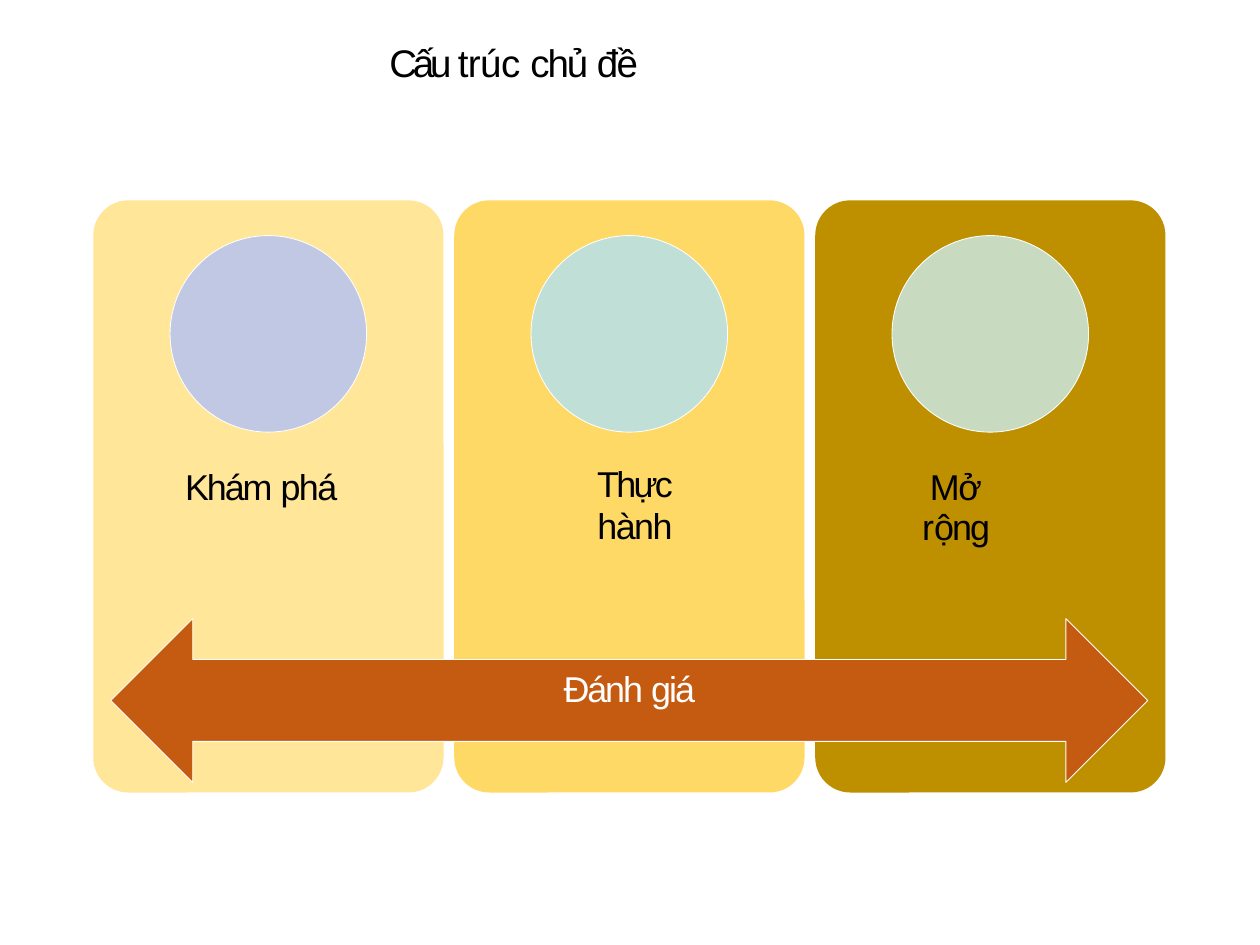
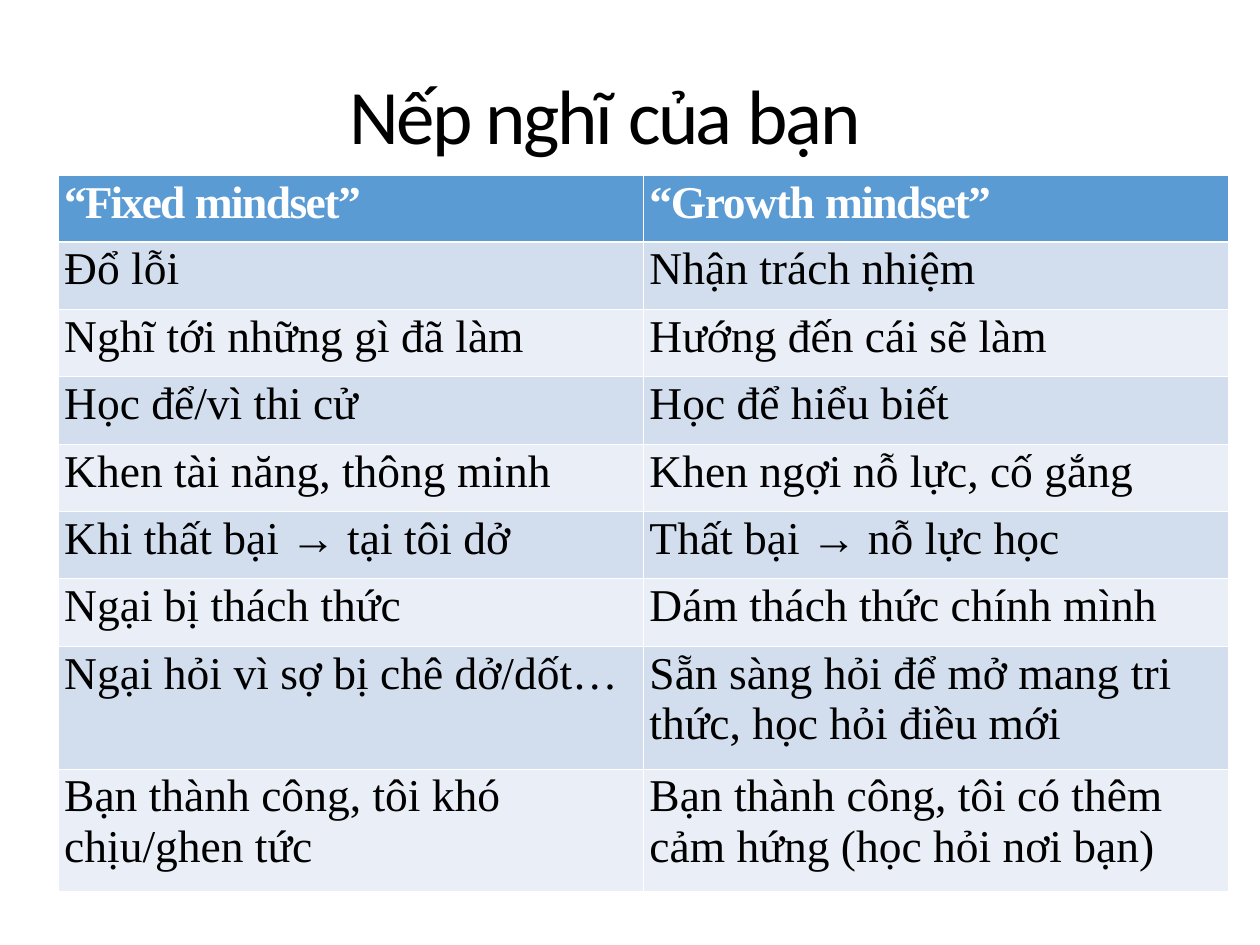
from lxml.etree import SubElement
from pptx import Presentation
from pptx.dml.color import RGBColor
from pptx.enum.shapes import MSO_SHAPE
from pptx.enum.text import MSO_ANCHOR, MSO_AUTO_SIZE, PP_ALIGN
from pptx.oxml import parse_xml
from pptx.oxml.ns import nsdecls, qn
from pptx.util import Inches, Pt

COLORS = {
    "black": "000000", "white": "FFFFFF",
    "explore": "FFE699", "practice": "FFD966", "extend": "BE9000",
    "lavender": "C0C8E3", "mint": "C0DFD6", "sage": "C8DBC1",
    "arrow": "C55A11",
    "header": "5B9BD4", "band_dark": "D2DEEE", "band_light": "EAEEF7",
}
COLUMNS, ROWS = 100, 75
TITLE_ONLY = 5

# Text is a list of paragraphs; a paragraph is a list of (words, letter spacing)
STEPS = [
    {"panel": "explore", "circle": "lavender", "box": (14.5, 36.7, 13.6, 13.5),
     "text": [[("Khám ", -1.2), ("phá", -0.9)]],
     "frame": {"margin_top": Inches(0.05)},
     "paragraph": {"line_spacing": Pt(22.6), "space_before": Pt(3.4)}, "indent": 0.02},
    {"panel": "practice", "circle": "mint", "box": (40.1, 36.7, 20.6, 9),
     "text": [[("Thực", -1.6)], [("hành", -0.9)]],
     "frame": {"margin_top": Inches(0.01)},
     "paragraph": {"line_spacing": Pt(23.6), "alignment": PP_ALIGN.CENTER}},
    {"panel": "extend", "circle": "sage", "box": (73.1, 36.7, 11, 13.5),
     "text": [[("Mở", -0.7), ("\v", 0), ("r", -0.1), ("ộng", -1.1)]],
     "frame": {"margin_top": Inches(0.05)},
     "paragraph": {"line_spacing": Pt(22.6), "space_before": Pt(3.4)}, "indent": 0.07},
]

MINDSETS = [
    ("Đổ lỗi", "Nhận trách nhiệm"),
    ("Nghĩ tới những gì đã làm", "Hướng đến cái sẽ làm"),
    ("Học để/vì thi cử", "Học để hiểu biết"),
    ("Khen tài năng, thông minh", "Khen ngợi nỗ lực, cố gắng"),
    ("Khi thất bại → tại tôi dở", "Thất bại → nỗ lực học"),
    ("Ngại bị thách thức", "Dám thách thức chính mình"),
    ("Ngại hỏi vì sợ bị chê dở/dốt…",
     "Sẵn sàng hỏi để mở mang tri\nthức, học hỏi điều mới"),
    ("Bạn thành công, tôi khó\nchịu/ghen tức",
     "Bạn thành công, tôi có thêm\ncảm hứng (học hỏi nơi bạn)"),
]


def color(name):
    return RGBColor.from_string(COLORS[name])


def apply(target, values):
    for name, value in values.items():
        setattr(target, name, value)


class Deck:
    """Holds the shared style and the slide being built."""

    frame_format = {
        "margin_left": 0, "margin_right": 0, "margin_top": Inches(0.01),
        "margin_bottom": 0, "word_wrap": True, "auto_size": MSO_AUTO_SIZE.NONE,
        "vertical_anchor": MSO_ANCHOR.TOP,
    }

    def __init__(self):
        self.presentation = Presentation()
        apply(self.presentation, {"slide_width": Inches(10), "slide_height": Inches(7.5)})
        self.column = self.presentation.slide_width / COLUMNS
        self.row = self.presentation.slide_height / ROWS
        self.slide = None

    def box(self, left, top, width, height):
        return (round(left * self.column), round(top * self.row),
                round(width * self.column), round(height * self.row))

    def fill_paragraphs(self, frame, text, font, ink, paragraph_format=None, indent=0):
        for index, runs in enumerate(text):
            paragraph = frame.add_paragraph() if index else frame.paragraphs[0]
            apply(paragraph, paragraph_format or {})
            if indent:
                paragraph_properties = paragraph._p.get_or_add_pPr()
                paragraph_properties.set("marL", str(Inches(0.01)))
                paragraph_properties.set("indent", str(Inches(indent - 0.01)))
            for words, spacing in runs:
                if words == "\v":
                    paragraph.add_line_break()
                    continue
                run = paragraph.add_run()
                run.text = words
                apply(run.font, font)
                run.font.color.rgb = color(ink)
                if spacing:
                    run._r.get_or_add_rPr().set("spc", str(round(spacing * 100)))

    def add_text(self, frame, text, font, ink="black", frame_format=None,
                 paragraph_format=None, indent=0):
        apply(frame, {**self.frame_format, **(frame_format or {})})
        self.fill_paragraphs(frame, text, font, ink, paragraph_format, indent)

    def title_slide(self, box, text, font, alignment, anchor):
        layout = self.presentation.slide_layouts[TITLE_ONLY]
        self.slide = self.presentation.slides.add_slide(layout)
        title = self.slide.shapes.title
        apply(title, dict(zip(("left", "top", "width", "height"), self.box(*box))))
        self.add_text(title.text_frame, text, font,
                      frame_format={"vertical_anchor": anchor},
                      paragraph_format={"alignment": alignment, "space_before": Pt(0.9)})

    def shape(self, kind, box, fill, outlined=True, adjustments=()):
        shape = self.slide.shapes.add_shape(kind, *self.box(*box))
        shape.shadow.inherit = False
        shape.fill.solid()
        shape.fill.fore_color.rgb = color(fill)
        if outlined:
            shape.line.color.rgb = color("white")
            shape.line.width = Pt(0.48)
        else:
            shape.line.fill.background()
        for index, value in enumerate(adjustments):
            shape.adjustments[index] = value
        return shape

    def label(self, box, text, font, **formats):
        label = self.slide.shapes.add_textbox(*self.box(*box))
        self.add_text(label.text_frame, text, font, **formats)

    def border(self, cell, side, width):
        line = parse_xml(f'<a:{side} {nsdecls("a")} w="{Pt(width)}"/>')
        fill = SubElement(line, qn("a:solidFill"))
        SubElement(fill, qn("a:srgbClr")).set("val", COLORS["white"])
        cell._tc.get_or_add_tcPr().append(line)

    def cell(self, cell, text, fill, font, ink, top_line, bottom_line):
        for side, width in {"lnL": 0.5, "lnR": 0.5, "lnT": top_line,
                            "lnB": bottom_line}.items():
            self.border(cell, side, width)
        cell.fill.solid()
        cell.fill.fore_color.rgb = color(fill)
        apply(cell, {"margin_left": Inches(0.05), "margin_right": 0,
                     "margin_top": Inches(0.02), "margin_bottom": 0})
        self.fill_paragraphs(cell.text_frame, text, font, ink)
        cell.text_frame.paragraphs[0].space_before = Pt(0.9)

    def table(self, box, header, rows, heights, font):
        frame = self.slide.shapes.add_table(len(rows) + 1, len(header), *self.box(*box))
        table = frame.table
        apply(table, {"first_row": False, "horz_banding": False})
        for row, height in zip(table.rows, heights):
            row.height = round(height * self.row)
        for index, text in enumerate(header):
            self.cell(table.cell(0, index), [text], "header", {**font, "bold": True},
                      "white", 0.5, 1.5)
        for number, values in enumerate(rows, 1):
            band = "band_dark" if number % 2 else "band_light"
            for index, value in enumerate(values):
                text = [[(line, 0)] for line in value.split("\n")]
                self.cell(table.cell(number, index), text, band, font, "black",
                          1.5 if number == 1 else 0.5, 0.5)


def build_structure(deck):
    deck.title_slide((30.9, 3, 38.1, 7.8),
                     [[("Cấu ", -2.4), ("trúc ", -0.3), ("chủ ", -1.2), ("đề", -0.9)]],
                     {"name": "Arial", "size": Pt(22)}, PP_ALIGN.LEFT, MSO_ANCHOR.TOP)
    font = {"name": "Arial", "size": Pt(20.5)}

    # Three equal panels, each with a centred circle and a label
    panel_left, panel_width, panel_step, circle_size = 7.4, 27.8, 28.65, 15.6
    for index, step in enumerate(STEPS):
        left = panel_left + index * panel_step
        deck.shape(MSO_SHAPE.ROUNDED_RECTANGLE, (left, 15.9, panel_width, 47),
                   step["panel"], outlined=False, adjustments=[0.1])
        circle_left = left + (panel_width - circle_size) / 2
        deck.shape(MSO_SHAPE.OVAL, (circle_left, 18.7, circle_size, circle_size),
                   step["circle"])
        deck.label(step["box"], step["text"], font, frame_format=step["frame"],
                   paragraph_format=step["paragraph"], indent=step.get("indent", 0))

    # Assessment arrow across all panels
    arrow = deck.shape(MSO_SHAPE.LEFT_RIGHT_ARROW, (8.8, 49.1, 82.3, 13), "arrow",
                       adjustments=[0.5, 0.5])
    deck.add_text(arrow.text_frame, [[("Đánh ", -1.2), ("giá", -1.1)]], font, "white",
                  {"vertical_anchor": MSO_ANCHOR.MIDDLE, "margin_bottom": Inches(0.2)},
                  {"alignment": PP_ALIGN.CENTER})


def build_mindsets(deck):
    deck.title_slide((19.4, 5.2, 57.3, 7.5),
                     [[("Nếp nghĩ ", -1.4), ("của ", -1.6), ("bạn", -1.2)]],
                     {"name": "Calibri", "size": Pt(44)}, PP_ALIGN.CENTER,
                     MSO_ANCHOR.MIDDLE)

    # Comparison table: single-line rows, then two double-line rows
    header = [[("“Fixed ", -1.2), ("mindset”", -0.9)],
              [("“Growth ", -0.8), ("mindset”", -0.9)]]
    deck.table((4.6, 13.9, 92.9, 56.9), header, MINDSETS,
               [5.3] + [5.35] * 6 + [9.75] * 2,
               {"name": "Times New Roman", "size": Pt(26)})


def main():
    deck = Deck()
    build_structure(deck)
    build_mindsets(deck)
    deck.presentation.save("out.pptx")


if __name__ == "__main__":
    main()
